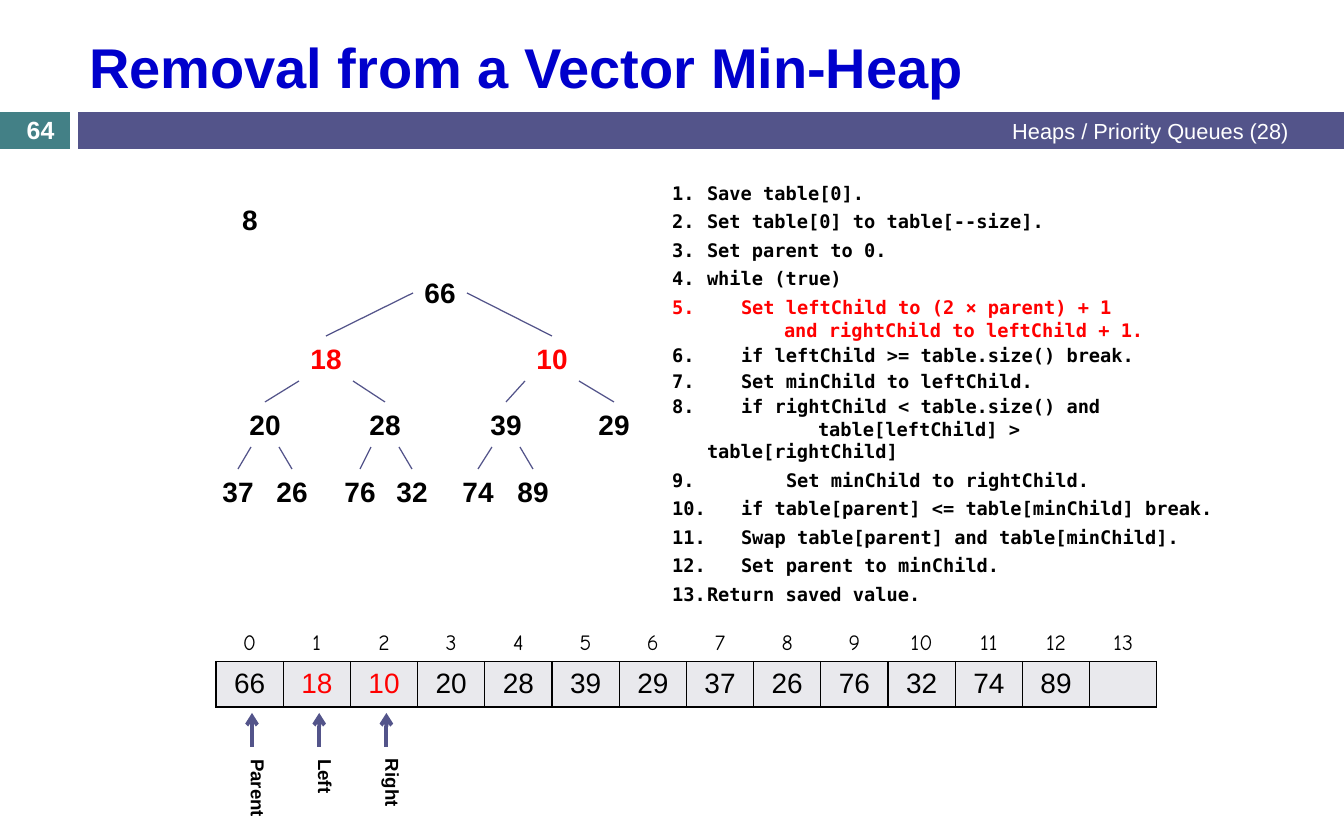
from dataclasses import dataclass

from pptx import Presentation
from pptx import util as u
from pptx.dml.color import RGBColor
from pptx.enum import shapes, text
from pptx.oxml import parse_xml
from pptx.oxml.ns import nsdecls, qn

SCALE = u.Inches(1) / 112
ALIGN, ANCHOR = text.PP_ALIGN, text.MSO_ANCHOR


@dataclass(frozen=True)
class Theme:
    sans: str = "Arial"
    mono: str = "DejaVu Sans Mono"
    comic: str = "Comic Neue"
    teal: str = "438086"
    indigo: str = "53548A"
    title: str = "0000CC"
    ink: str = "000000"
    hot: str = "FF0000"
    paper: str = "FFFFFF"
    cell: str = "E9E9ED"
    title_size: float = 36
    value_size: float = 18
    page_size: float = 16
    index_size: float = 14
    code_size: float = 12
    thin: float = 0.79
    border: float = 1
    thick: float = 2.5


T = Theme()
HEAP = [66, 18, 10, 20, 28, 39, 29, 37, 26, 76, 32, 74, 89]
NODE_X = [440, 326, 552, 265, 385, 506, 614, 238, 292, 360, 412, 478, 533]
LEVEL_Y = [270, 336, 402, 469]
EDGE_START = [(27, 23), (27, 45), (14, 45)]  # offset from a parent's top centre
NODE_W, NODE_H = 54, 45
CHILDREN = (1, 2)
POINTERS = [("Parent", 69), ("Left", 46), ("Right", 59)]
CELLS, CELL_W = 14, 67.2
HANG = 35

# first number of the list (None: continuation line), left margin, indent, space before, words
CODE = [
    (1, HANG, -HANG, 0, "Save table[0]."),
    (1, HANG, -HANG, 4, "Set table[0] to table[--size]."),
    (1, HANG, -HANG, 4, "Set parent to 0."),
    (1, HANG, -HANG, 4, "while (true)"),
    (1, 69, -69, 4, "Set leftChild to (2 × parent) + 1"),
    (None, 112, 0, 0, "and rightChild to leftChild + 1."),
    (6, 69, -69, 2, "if leftChild >= table.size() break."),
    (6, 69, -69, 2, "Set minChild to leftChild."),
    (6, 69, -69, 2, "if rightChild < table.size() and"),
    (None, HANG, 111, 0, "table[leftChild] > table[rightChild]"),
    (9, 114, -114, 4, "Set minChild to rightChild."),
    (9, 69, -69, 4, "if table[parent] <= table[minChild] break."),
    (9, 69, -69, 4, "Swap table[parent] and table[minChild]."),
    (9, 69, -69, 4, "Set parent to minChild."),
    (9, HANG, -HANG, 4, "Return saved value."),
]
HOT_LINES = (4, 5)


def px(n):
    return u.Emu(round(n * SCALE))


def rgb(color):
    return RGBColor.from_string(color)


def write(p, words, size=T.value_size, color=T.ink, font=T.sans, bold=False, align=ALIGN.LEFT):
    p.alignment = align
    r = p.add_run()
    r.text = words
    r.font.name, r.font.size, r.font.bold = font, u.Pt(size), bold
    r.font.color.rgb = rgb(color)


def add_box(s, x, y, w, h, wrap=True, anchor=ANCHOR.TOP):
    tf = s.shapes.add_textbox(px(x), px(y), px(w), px(h)).text_frame
    tf.word_wrap, tf.vertical_anchor = wrap, anchor
    return tf


def add_bar(s, x, y, w, h, color):
    sp = s.shapes.add_shape(shapes.MSO_SHAPE.RECTANGLE, px(x), px(y), px(w), px(h))
    sp.shadow.inherit = False
    sp.fill.solid()
    sp.fill.fore_color.rgb = rgb(color)
    sp.line.fill.background()


def add_line(s, x1, y1, x2, y2, width=T.thin, arrow=False):
    c = s.shapes.add_connector(shapes.MSO_CONNECTOR.STRAIGHT, px(x1), px(y1), px(x2), px(y2))
    c.line.color.rgb, c.line.width = rgb(T.indigo), u.Pt(width)
    if arrow:
        c.line._get_or_add_ln().append(parse_xml(f'<a:tailEnd {nsdecls("a")} type="arrow"/>'))
    c._element.spPr.append(parse_xml(f'<a:effectLst {nsdecls("a")}/>'))


def set_borders(cell, **colors):
    """Border colours by side: L, R, T, B; called before the fill, which must come after them."""
    for side, color in colors.items():
        cell._tc.get_or_add_tcPr().append(parse_xml(
            f'<a:ln{side} {nsdecls("a")} w="{u.Pt(T.border)}"><a:solidFill>'
            f'<a:srgbClr val="{color}"/></a:solidFill></a:ln{side}>'))


def add_header(s):
    add_bar(s, 0, 112, 70, 37, T.teal)
    add_bar(s, 78, 112, 1266, 37, T.indigo)
    write(add_box(s, 504, 111, 796, 40, anchor=ANCHOR.MIDDLE).paragraphs[0],
          "Heaps / Priority Queues (28)", T.index_size, T.paper, align=ALIGN.RIGHT)
    write(add_box(s, 0, 113, 81, 34, anchor=ANCHOR.MIDDLE).paragraphs[0],
          "64", T.page_size, T.paper, bold=True, align=ALIGN.CENTER)
    write(add_box(s, 78, 21, 1222, 90, anchor=ANCHOR.MIDDLE).paragraphs[0],
          "Removal from a Vector Min-Heap", T.title_size, T.title, bold=True)


def add_node(s, value, x, y, color=T.ink):
    tf = add_box(s, x - NODE_W / 2, y, NODE_W, NODE_H, wrap=False)
    write(tf.paragraphs[0], str(value), color=color, bold=True, align=ALIGN.CENTER)


def add_tree(s):
    """Nodes in array order; the parent of node i is node (i - 1) // 2."""
    add_node(s, 8, 250, 197)
    for i, (value, x) in enumerate(zip(HEAP, NODE_X)):
        level = (i + 1).bit_length() - 1
        add_node(s, value, x, LEVEL_Y[level], T.hot if i in CHILDREN else T.ink)
        if i:
            dx, dy = EDGE_START[level - 1]
            side = -1 if i % 2 else 1
            add_line(s, NODE_X[(i - 1) // 2] + side * dx, LEVEL_Y[level - 1] + dy,
                     x, LEVEL_Y[level])


def add_array(s):
    tbl = s.shapes.add_table(2, CELLS, px(216), px(616), px(CELLS * CELL_W), px(91)).table
    tbl.first_row = tbl.horz_banding = False
    for i in range(CELLS):
        index, slot = tbl.cell(0, i), tbl.cell(1, i)
        set_borders(index, L=T.paper, R=T.paper, T=T.paper, B=T.ink)
        set_borders(slot, L=T.ink, R=T.ink, T=T.ink, B=T.ink)
        for cell, fill, anchor in ((index, T.paper, ANCHOR.BOTTOM), (slot, T.cell, ANCHOR.MIDDLE)):
            cell.fill.solid()
            cell.fill.fore_color.rgb = rgb(fill)
            cell.vertical_anchor = anchor
        write(index.text_frame.paragraphs[0], str(i), T.index_size, font=T.comic,
              align=ALIGN.CENTER)
        if i < len(HEAP):
            write(slot.text_frame.paragraphs[0], str(HEAP[i]),
                  color=T.hot if i in CHILDREN else T.ink, align=ALIGN.CENTER)


def add_pointers(s):
    for i, (label, h) in enumerate(POINTERS):
        x = 252 + i * CELL_W
        tf = add_box(s, x - 22, 748, 45, h, wrap=False)
        tf._txBody.find(qn("a:bodyPr")).set("vert", "vert")
        write(tf.paragraphs[0], label, T.code_size, bold=True)
        add_line(s, x, 747, x, 713, T.thick, arrow=True)


def add_code(s):
    tf = add_box(s, 661, 176, 571, 417)
    for i, (start, margin, indent, before, words) in enumerate(CODE):
        p = tf.add_paragraph() if i else tf.paragraphs[0]
        write(p, words, T.code_size, T.hot if i in HOT_LINES else T.ink, T.mono, bold=True)
        p.space_before = u.Pt(before)
        pPr = p._p.get_or_add_pPr()
        pPr.set("marL", str(px(margin)))
        pPr.set("indent", str(px(indent)))
        bullet = f'buAutoNum type="arabicPeriod" startAt="{start}"' if start else "buNone"
        pPr.append(parse_xml(f'<a:{bullet.replace(" ", " " + nsdecls("a") + " ", 1)}/>' if start
                             else f'<a:{bullet} {nsdecls("a")}/>'))


def main():
    prs = Presentation()
    prs.slide_width, prs.slide_height = px(1344), px(840)
    s = prs.slides.add_slide(prs.slide_layouts[6])
    add_header(s)
    add_array(s)
    add_pointers(s)
    add_tree(s)
    add_code(s)
    prs.save("out.pptx")


if __name__ == "__main__":
    main()
